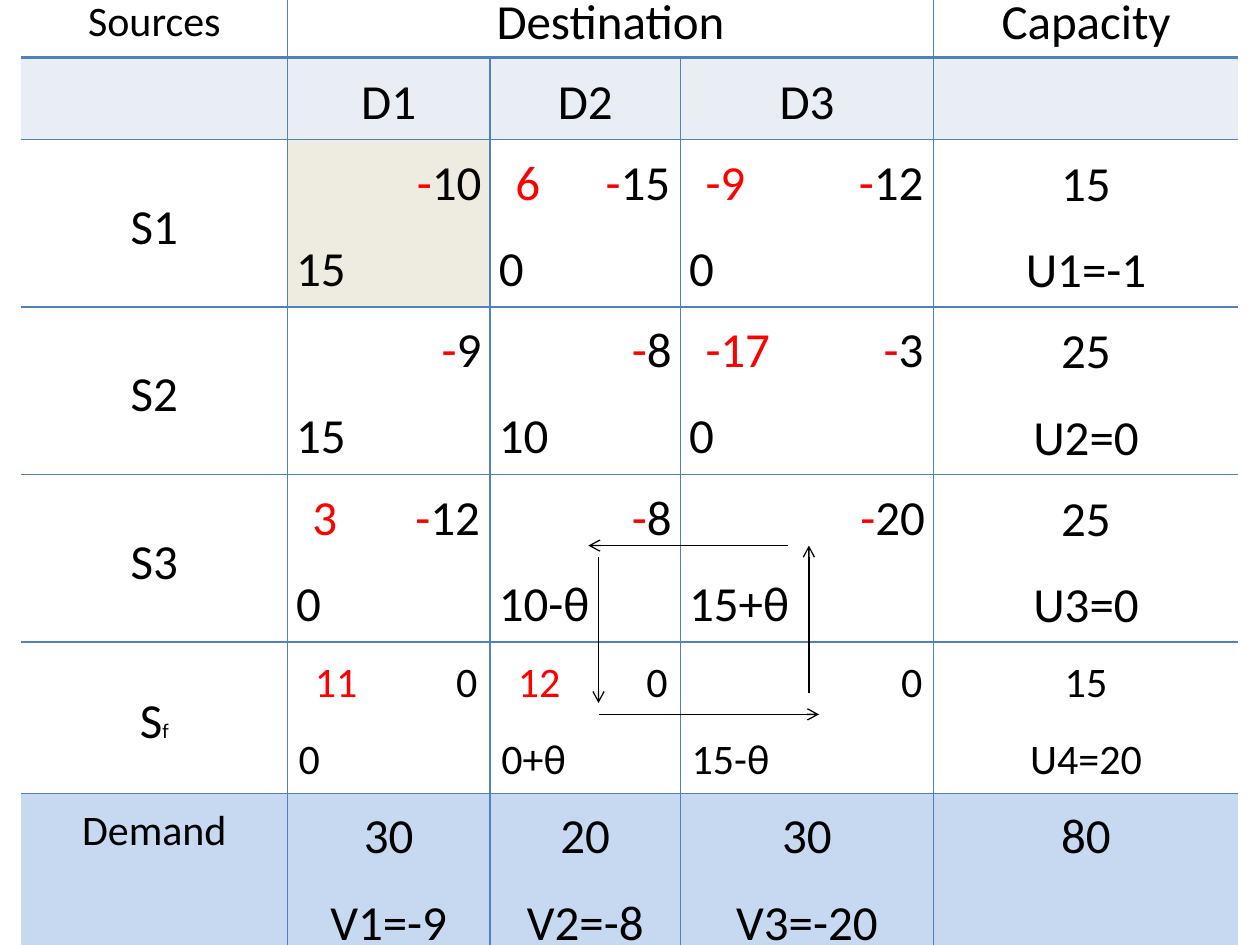
import pptx
import pptx.util
import pptx.dml.color
import pptx.enum.shapes
import pptx.enum.text
from pptx.oxml import parse_xml
from pptx.oxml.ns import nsdecls

Inches, Pt = pptx.util.Inches, pptx.util.Pt
ALIGN, ANCHOR = pptx.enum.text.PP_ALIGN, pptx.enum.text.MSO_ANCHOR

COLORS = {"text": "000000", "red": "FF0000", "grid": "4F81BD", "white": "FFFFFF",
          "band": "E9EDF4", "chosen": "EEECE1", "demand": "C6D9F1"}
FONT = "Calibri"
LARGE, MEDIUM, SUBSCRIPT = 28, 24, 12

HEADER = ["Sources", "Destination", None, None, "Capacity"]
DESTINATIONS = ["", "D1", "D2", "D3", ""]
# source, (opportunity cost, unit cost, allocation) per destination, capacity lines
SOURCES = [
    ("S1", [("", "-10", "15"), ("6", "-15", "0"), ("-9", "-12", "0")], ["15", "U1=-1"]),
    ("S2", [("", "-9", "15"), ("", "-8", "10"), ("-17", "-3", "0")], ["25", "U2=0"]),
    ("S3", [("3", "-12", "0"), ("", "-8", "10-θ"), ("", "-20", "15+θ")], ["25", "U3=0"]),
    ("Sf", [("11", "0", "0"), ("12", "0", "0+θ"), ("", "0", "15-θ")], ["15", "U4=20"]),
]
DEMAND = [["Demand"], ["30", "V1=-9"], ["20", "V2=-8"], ["30", "V3=-20"], ["80"]]

TABLE_LEFT, TABLE_TOP = 0.17, -0.17
COLUMNS = [2.11, 1.61, 1.51, 2.01, 2.42]
ROWS = [0.61, 0.65, 1.33, 1.33, 1.33, 1.2, 0.76]
DUMMY_ROW, DEMAND_ROW = 5, 6
OPPORTUNITY_INDENT = 0.13

LOOP_ARROWS = [((4.75, 5.67), (6.5, 5.67)), ((6.42, 5.5), (6.42, 4.33)),
               ((6.25, 4.33), (4.67, 4.33)), ((4.75, 4.42), (4.75, 5.58))]


def rgb(name):
    return pptx.dml.color.RGBColor.from_string(COLORS[name])


def side_inset(row):
    return 0.09 if row == DUMMY_ROW else 0.07


def write_paragraph(paragraph, runs, alignment, tabs=()):
    """Fill a paragraph with (text, size, color) runs; tabs are (inches, kind)."""
    form = {"alignment": alignment, "line_spacing": 1.15, "space_after": Pt(10)}
    for name, value in form.items():
        setattr(paragraph, name, value)
    if tabs:
        stops = "".join(f'<a:tab pos="{Inches(place)}" algn="{kind}"/>' for place, kind in tabs)
        paragraph._p.get_or_add_pPr().append(
            parse_xml(f'<a:tabLst {nsdecls("a")}>{stops}</a:tabLst>'))
    for text, size, color in runs:
        run = paragraph.add_run()
        run.text = text
        for name, value in {"name": FONT, "size": Pt(size), "bold": False}.items():
            setattr(run.font, name, value)
        run.font.color.rgb = rgb(color)


def write_centered(cell, lines, size=LARGE):
    frame = cell.text_frame
    for index, line in enumerate(lines):
        paragraph = frame.add_paragraph() if index else frame.paragraphs[0]
        write_paragraph(paragraph, [(line, size, "text")], ALIGN.CENTER)


def write_route(cell, route, size, inner_width):
    opportunity, cost, allocation = route
    digits = cost.lstrip("-")
    runs = [(digits, size, "text")]
    if digits != cost:
        runs.insert(0, ("-", size, "red"))
    first = cell.text_frame.paragraphs[0]
    if opportunity:
        runs.insert(0, (f"\t{opportunity}\t", size, "red"))
        tabs = [(OPPORTUNITY_INDENT, "l"), (inner_width - 0.01, "r")]
        write_paragraph(first, runs, ALIGN.LEFT, tabs)
    else:
        write_paragraph(first, runs, ALIGN.RIGHT)
    write_paragraph(cell.text_frame.add_paragraph(), [(allocation, size, "text")], ALIGN.LEFT)


def draw_borders(cell, row, column):
    """Rule the inner grid only, with a heavy line below the header."""
    widths = {"L": 1 if column else 0,
              "R": 1 if column < len(COLUMNS) - 1 else 0,
              "T": {0: 0, 1: 2.25}.get(row, 1),
              "B": {0: 2.25, DEMAND_ROW: 0}.get(row, 1)}
    properties = cell._tc.get_or_add_tcPr()
    for side, width in widths.items():
        paint = (f'<a:solidFill><a:srgbClr val="{COLORS["grid"]}"/></a:solidFill>'
                 if width else "<a:noFill/>")
        properties.append(parse_xml(
            f'<a:ln{side} {nsdecls("a")} w="{Pt(width)}">{paint}</a:ln{side}>'))


def fill_name(row, column):
    if (row, column) == (2, 1):
        return "chosen"
    return {1: "band", DEMAND_ROW: "demand"}.get(row, "white")


def format_cell(cell, row, column):
    draw_borders(cell, row, column)
    cell.fill.solid()
    cell.fill.fore_color.rgb = rgb(fill_name(row, column))
    at_top = row == DEMAND_ROW or (2 <= row < DUMMY_ROW and 1 <= column <= 3)
    inset = Inches(side_inset(row))
    form = {"margin_left": inset, "margin_right": inset,
            "margin_top": Inches(0.04), "margin_bottom": Inches(0.04),
            "vertical_anchor": ANCHOR.TOP if at_top else ANCHOR.MIDDLE}
    for name, value in form.items():
        setattr(cell, name, value)


def add_transport_table(slide):
    table = slide.shapes.add_table(
        len(ROWS), len(COLUMNS), Inches(TABLE_LEFT), Inches(TABLE_TOP),
        Inches(sum(COLUMNS)), Inches(sum(ROWS))).table
    table.first_row = table.horz_banding = False
    for column, width in enumerate(COLUMNS):
        table.columns[column].width = Inches(width)
    for row, height in enumerate(ROWS):
        table.rows[row].height = Inches(height)
        for column in range(len(COLUMNS)):
            format_cell(table.cell(row, column), row, column)
    table.cell(0, 1).merge(table.cell(0, 3))

    for column, title in enumerate(HEADER):
        if title:
            write_centered(table.cell(0, column), [title], LARGE if column else MEDIUM)
    for column, title in enumerate(DESTINATIONS):
        if title:
            write_centered(table.cell(1, column), [title])
    for row, (source, routes, capacity) in enumerate(SOURCES, start=2):
        size = MEDIUM if row == DUMMY_ROW else LARGE
        letter, index = source
        index_size = SUBSCRIPT if row == DUMMY_ROW else LARGE
        write_paragraph(table.cell(row, 0).text_frame.paragraphs[0],
                        [(letter, LARGE, "text"), (index, index_size, "text")], ALIGN.CENTER)
        for column, route in enumerate(routes, start=1):
            inner_width = COLUMNS[column] - 2 * side_inset(row)
            write_route(table.cell(row, column), route, size, inner_width)
        write_centered(table.cell(row, 4), capacity, size)
    for column, lines in enumerate(DEMAND):
        write_centered(table.cell(DEMAND_ROW, column), lines, LARGE if column else MEDIUM)


def add_arrow(slide, start, end):
    arrow = slide.shapes.add_connector(
        pptx.enum.shapes.MSO_CONNECTOR.STRAIGHT, *map(Inches, start + end))
    arrow.line.width = Pt(0.75)
    arrow.line.color.rgb = rgb("text")
    arrow.line._get_or_add_ln().append(
        parse_xml(f'<a:tailEnd {nsdecls("a")} type="arrow"/>'))
    arrow._element.spPr.append(parse_xml(f'<a:effectLst {nsdecls("a")}/>'))


def main():
    presentation = pptx.Presentation()
    presentation.slide_width, presentation.slide_height = Inches(10), Inches(7.5)
    slide = presentation.slides.add_slide(presentation.slide_layouts[6])
    add_transport_table(slide)
    for start, end in LOOP_ARROWS:
        add_arrow(slide, start, end)
    presentation.save("out.pptx")


if __name__ == "__main__":
    main()
